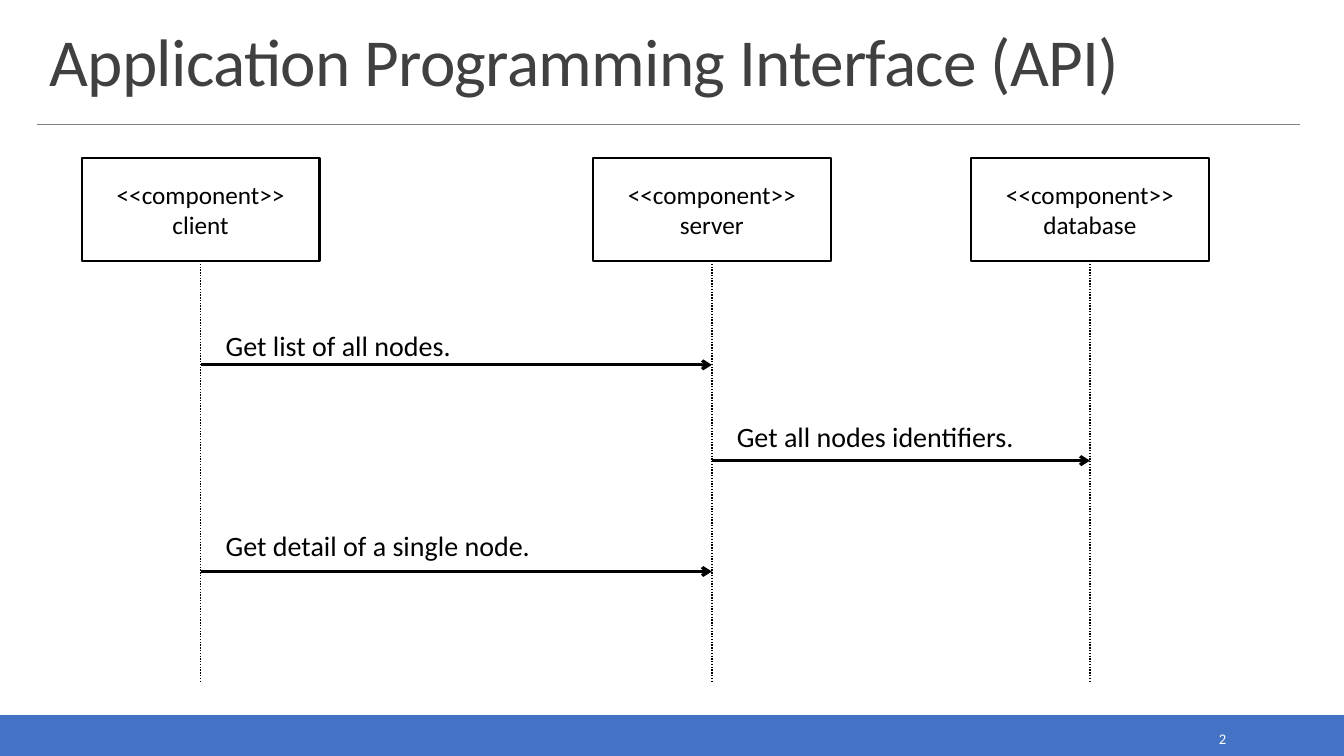
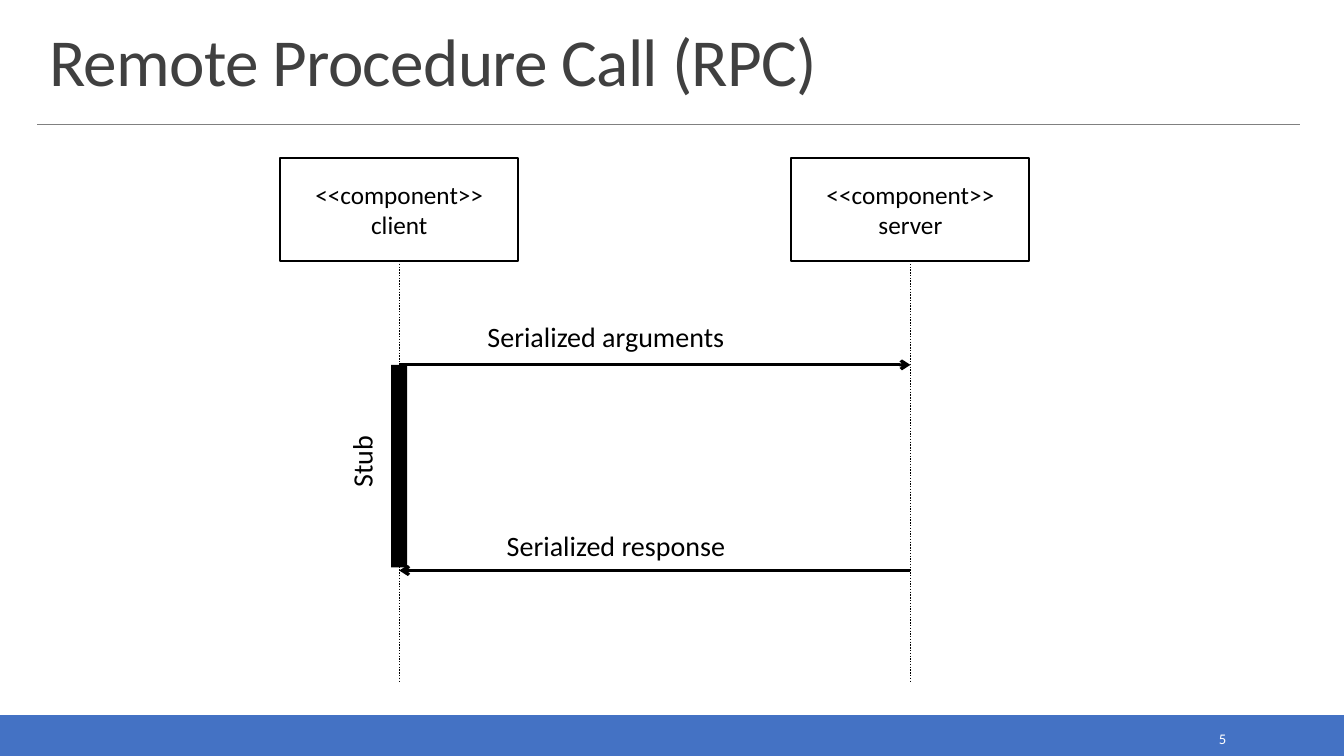
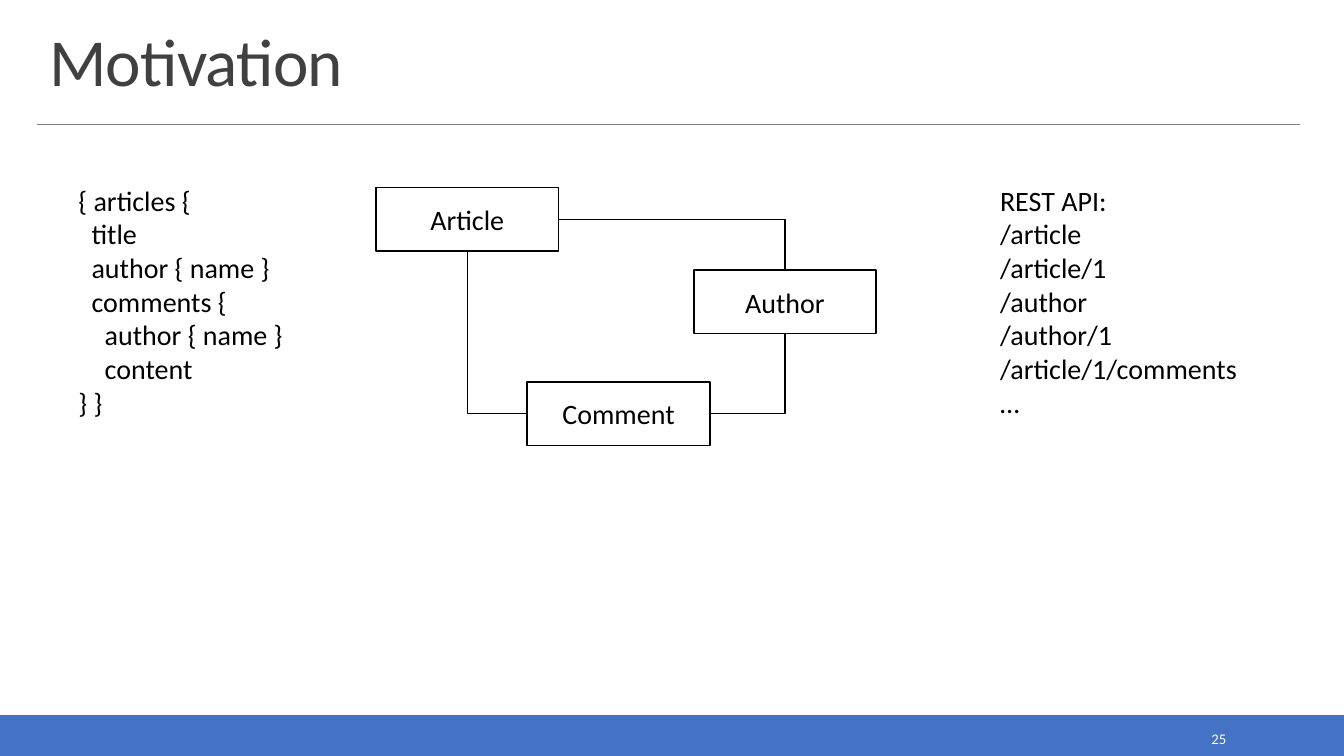
import pptx
import pptx.util
import pptx.dml.color
import pptx.enum.dml
import pptx.enum.shapes
import pptx.enum.text
import pptx.oxml.ns
from lxml import etree

Inches = pptx.util.Inches
ALIGN = pptx.enum.text.PP_ALIGN
ANCHOR = pptx.enum.text.MSO_ANCHOR
CONNECTOR = pptx.enum.shapes.MSO_CONNECTOR
RECTANGLE = pptx.enum.shapes.MSO_SHAPE.RECTANGLE

FONT = "Calibri"
BLUE, BLACK, WHITE = "4472C4", "000000", "FFFFFF"
TITLE_GRAY, RULE_GRAY = "404040", "808080"

# Connection sites of a rectangle
TOP, LEFT, BOTTOM, RIGHT = range(4)


def rgb(value):
    return pptx.dml.color.RGBColor.from_string(value)


def add_xml(parent, tag, **attributes):
    return etree.SubElement(parent, pptx.oxml.ns.qn(tag), **attributes)


class Deck:
    """Holds the presentation, its style and the current slide."""

    def __init__(self):
        self.prs = pptx.Presentation()
        self.prs.slide_width = Inches(13.33)
        self.prs.slide_height = Inches(7.5)
        self.slide = None

    # Shared frame: band, rule, title, page number
    def start_slide(self, title, number):
        self.slide = self.prs.slides.add_slide(self.prs.slide_layouts[6])
        self.box(0, 7.1, 13.33, 0.4, fill=BLUE, line=BLUE)
        self.line(0.37, 1.23, 12.89, 1.23, width=0.5, color=RULE_GRAY)
        heading = self.text(0.39, 0.2, 12.52, 0.84, [title], size=48,
                            color=TITLE_GRAY, anchor=ANCHOR.BOTTOM, grow=False)
        paragraph = heading.text_frame.paragraphs[0]
        paragraph.line_spacing = 0.85
        paragraph.runs[0].font._element.set("spc", "-50")
        self.text(10.83, 7.19, 1.43, 0.28, [number], size=10.5, color=WHITE,
                  align=ALIGN.RIGHT, anchor=ANCHOR.MIDDLE, grow=False)

    def set_lines(self, frame, lines, size, color=BLACK, align=ALIGN.LEFT):
        frame.text = "\n".join(lines)
        for paragraph in frame.paragraphs:
            paragraph.alignment = align
            for run in paragraph.runs:
                run.font.name = FONT
                run.font.size = pptx.util.Pt(size)
                run.font.color.rgb = rgb(color)

    def text(self, left, top, width, height, lines, size=20, color=BLACK,
             align=ALIGN.LEFT, anchor=ANCHOR.TOP, grow=True):
        area = self.slide.shapes.add_textbox(
            Inches(left), Inches(top), Inches(width), Inches(height))
        frame = area.text_frame
        frame.word_wrap = True
        frame.vertical_anchor = anchor
        self.set_lines(frame, lines, size, color, align)
        if grow:
            frame.auto_size = pptx.enum.text.MSO_AUTO_SIZE.SHAPE_TO_FIT_TEXT
        return area

    def box(self, left, top, width, height, lines=(), size=20, fill=None,
            line=None, line_width=1.25):
        shape = self.slide.shapes.add_shape(
            RECTANGLE, Inches(left), Inches(top), Inches(width), Inches(height))
        shape.shadow.inherit = False
        if fill:
            shape.fill.solid()
            shape.fill.fore_color.rgb = rgb(fill)
        else:
            shape.fill.background()
        if line:
            shape.line.color.rgb = rgb(line)
            shape.line.width = pptx.util.Pt(line_width)
        else:
            shape.line.fill.background()
        if lines:
            shape.text_frame.vertical_anchor = ANCHOR.MIDDLE
            self.set_lines(shape.text_frame, lines, size, align=ALIGN.CENTER)
        return shape

    def line(self, x1, y1, x2, y2, width=1, color=BLACK,
             kind=CONNECTOR.STRAIGHT):
        connector = self.slide.shapes.add_connector(
            kind, Inches(x1), Inches(y1), Inches(x2), Inches(y2))
        connector.line.color.rgb = rgb(color)
        connector.line.width = pptx.util.Pt(width)
        add_xml(connector._element.spPr, "a:effectLst")
        return connector

    # Sequence diagram parts
    def participant(self, center, name):
        width, top, height = 2.36, 1.57, 1.02
        self.box(center - width / 2, top, width, height,
                 ["<<component>>", name], size=18, line=BLACK, line_width=1.5)
        lifeline = self.line(center, top + height, center, 6.77)
        lifeline.line.dash_style = pptx.enum.dml.MSO_LINE.ROUND_DOT

    def message(self, start, end, y, label, label_left, label_top,
                align=ALIGN.LEFT):
        arrow = self.line(start, y, end, y, width=2.25)
        add_xml(arrow.line._get_or_add_ln(), "a:tailEnd", type="arrow")
        self.text(label_left, label_top, 3.46, 0.44, [label], align=align)

    # Class diagram parts
    def entity(self, left, top, name):
        return self.box(left, top, 1.81, 0.63, [name], line=BLACK)

    def relation(self, start, start_site, end, end_site):
        link = self.line(0, 0, 0, 0, kind=CONNECTOR.ELBOW)
        link.begin_connect(start, start_site)
        link.end_connect(end, end_site)
        link._element.spPr.prstGeom.set("prst", "bentConnector2")


def api_slide(deck):
    deck.start_slide("Application Programming Interface (API)", "2")
    client, server, database = 1.99, 7.06, 10.81
    for center, name in ((client, "client"), (server, "server"),
                         (database, "database")):
        deck.participant(center, name)
    for start, end, y, label, label_top in (
            (client, server, 3.62, "Get list of all nodes.", 3.21),
            (server, database, 4.57, "Get all nodes identifiers.", 4.11),
            (client, server, 5.67, "Get detail of a single node.", 5.19)):
        deck.message(start, end, y, label, start + 0.15, label_top)


def rpc_slide(deck):
    deck.start_slide("Remote Procedure Call (RPC)", "5")
    client, server = 3.96, 9.03
    deck.participant(client, "client")
    deck.participant(server, "server")
    deck.message(client, server, 3.62, "Serialized arguments", 4.28, 3.12,
                 ALIGN.CENTER)
    deck.message(server, client, 5.66, "Serialized response", 4.38, 5.19,
                 ALIGN.CENTER)
    # Stub activation bar
    deck.box(client - 0.08, 3.62, 0.16, 2.01, fill=BLACK)
    stub = deck.text(2.57, 4.36, 2.04, 0.44, ["Stub"], align=ALIGN.CENTER)
    stub.rotation = 270


def motivation_slide(deck):
    deck.start_slide("Motivation", "25")

    # Query, indented by nesting depth
    query_lines = ((0, "{ articles {"), (1, "title"), (1, "author { name }"),
                   (1, "comments {"), (2, "author { name }"), (2, "content"),
                   (0, "} }"))
    query = deck.text(0.68, 1.77, 3.33, 2.46, [line for _, line in query_lines])
    for paragraph, (depth, _) in zip(query.text_frame.paragraphs, query_lines):
        paragraph._p.get_or_add_pPr().set("marL", str(Inches(0.13 * depth)))

    # Data model
    article = deck.entity(3.73, 1.86, "Article")
    author = deck.entity(6.88, 2.68, "Author")
    comment = deck.entity(5.23, 3.79, "Comment")
    deck.relation(article, RIGHT, author, TOP)
    deck.relation(comment, LEFT, article, BOTTOM)
    deck.relation(comment, RIGHT, author, BOTTOM)

    # Endpoints
    deck.text(9.82, 1.77, 2.7, 2.46,
              ["REST API:", "/article", "/article/1", "/author", "/author/1",
               "/article/1/comments", "…"])


def main():
    deck = Deck()
    api_slide(deck)
    rpc_slide(deck)
    motivation_slide(deck)
    deck.prs.save("out.pptx")


if __name__ == "__main__":
    main()
